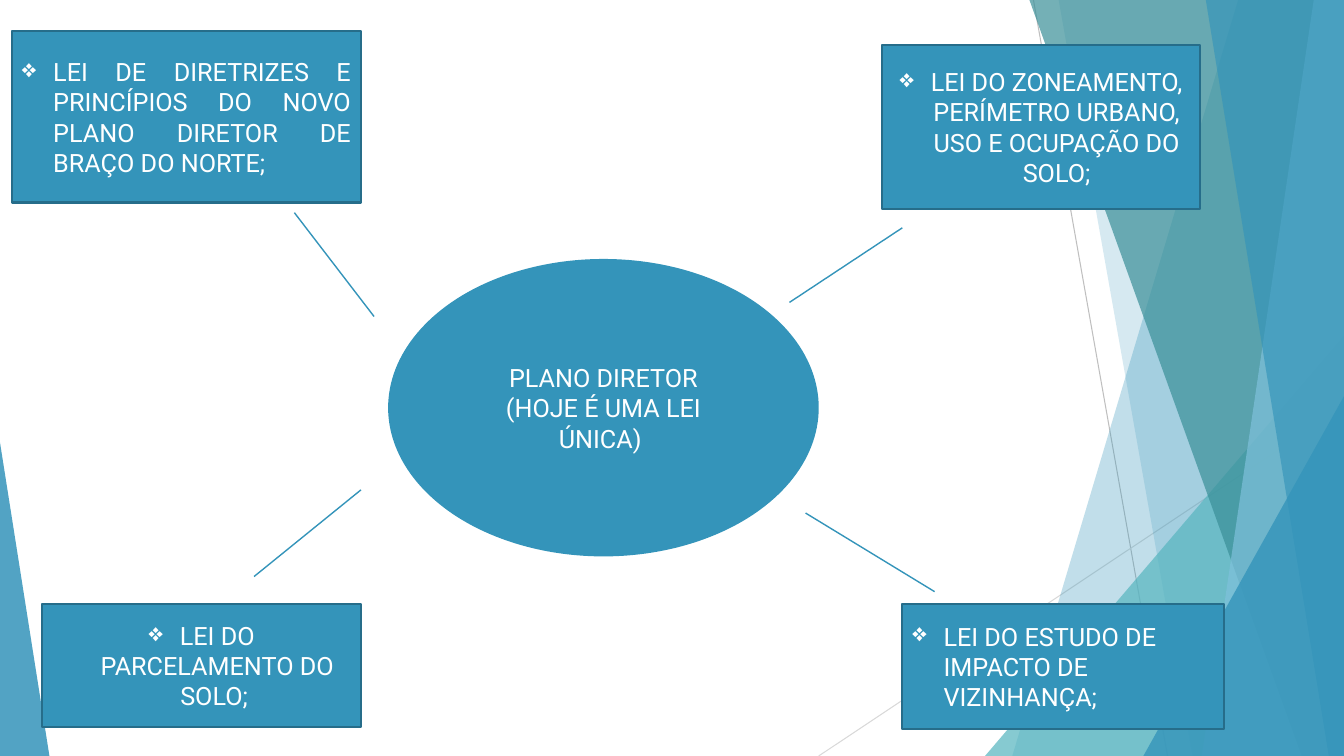
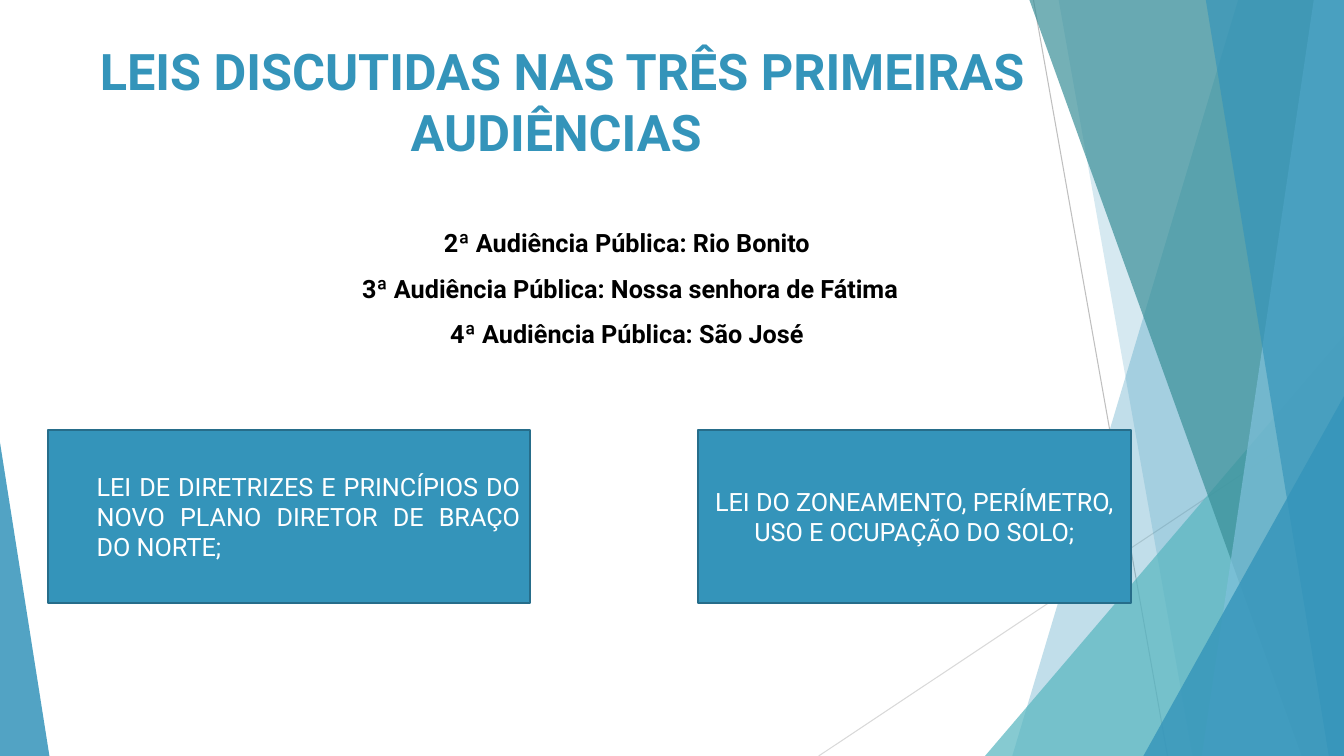
from dataclasses import dataclass
from lxml.etree import SubElement
from pptx import Presentation
from pptx.dml.color import RGBColor
from pptx.enum.shapes import MSO_CONNECTOR, MSO_SHAPE
from pptx.enum.text import MSO_ANCHOR, PP_ALIGN
from pptx.oxml.ns import qn
from pptx.util import Inches, Pt


@dataclass(frozen=True)
class Theme:
    blue: str = "3494BA"
    edge: str = "266D8A"
    teal: str = "58B6C0"
    deep: str = "3A8F98"
    sky: str = "7FC1DB"
    gray: str = "BFBFBF"
    pale: str = "D9D9D9"
    white: str = "FFFFFF"
    black: str = "000000"
    font: str = "Roboto"
    head: int = 36
    body: int = 18


T = Theme()
WIDE, HIGH = 13.33, 7.5
LEFT, MID, JUST = PP_ALIGN.LEFT, PP_ALIGN.CENTER, PP_ALIGN.JUSTIFY


def rgb(code):
    return RGBColor.from_string(code)


def paint(shape, fill, edge=None, alpha=None):
    """Fill a shape, with an optional outline and opacity in percent."""
    shape.shadow.inherit = False
    shape.fill.solid()
    shape.fill.fore_color.rgb = rgb(fill)
    if alpha:
        color = shape.element.spPr.find(qn("a:solidFill"))[0]
        SubElement(color, qn("a:alpha")).set("val", str(alpha * 1000))
    if edge:
        shape.line.color.rgb = rgb(edge)
        shape.line.width = Pt(1.5)
    else:
        shape.line.fill.background()
    return shape


def rule(slide, start, end, color, width):
    line = slide.shapes.add_connector(
        MSO_CONNECTOR.STRAIGHT, *map(Inches, start + end))
    line.line.color.rgb = rgb(color)
    line.line.width = Pt(width)
    SubElement(line.element.spPr, qn("a:effectLst"))


def write(shape, lines, align=MID, color=T.white, size=T.body, bold=False,
          indent=0, bullet=None, space=None, anchor=MSO_ANCHOR.MIDDLE):
    """Put one paragraph per line into a shape."""
    frame = shape.text_frame
    frame.word_wrap = True
    frame.vertical_anchor = anchor
    frame.text = "\n".join(lines)
    for para in frame.paragraphs:
        para.alignment = align
        if space:
            para.line_spacing = space
        props = para._p.get_or_add_pPr()
        if indent:
            props.set("marL", str(Inches(indent)))
        if bullet:
            props.set("indent", str(-Inches(indent)))
            SubElement(props, qn("a:buChar")).set("char", bullet)
        para.font.name = T.font
        para.font.size = Pt(size)
        para.font.bold = bold
        para.font.color.rgb = rgb(color)


def card(slide, box, text, kind=MSO_SHAPE.RECTANGLE, edge=T.edge, **style):
    shape = slide.shapes.add_shape(kind, *map(Inches, box))
    write(paint(shape, T.blue, edge), text, **style)


def label(slide, box, lines, **style):
    shape = slide.shapes.add_textbox(*map(Inches, box))
    write(shape, lines, bold=True, anchor=MSO_ANCHOR.TOP, **style)


def veil(slide, top, foot, color, alpha):
    """Band from a slanted left side to the right edge of the slide."""
    pen = slide.shapes.build_freeform(Inches(top), 0)
    pen.add_line_segments([(Inches(x), Inches(y)) for x, y in
                           ((WIDE, 0), (WIDE, HIGH), (foot, HIGH))])
    paint(pen.convert_to_shape(), color, alpha=alpha)


def wedge(slide, left, top, width, tip, color, alpha):
    """Triangle standing on the bottom edge, tip at 0 (left) or 1 (right)."""
    box = left, top, width, HIGH - top
    shape = slide.shapes.add_shape(
        MSO_SHAPE.ISOSCELES_TRIANGLE, *map(Inches, box))
    shape.adjustments[0] = tip
    paint(shape, color, alpha=alpha)


def decor(slide, layout):
    """Draw the shared facets and move them to the layout."""
    rule(slide, (10.25, 0), (11.58, HIGH), T.gray, 0.75)
    rule(slide, (WIDE, 4.03), (8.12, HIGH), T.pale, 0.75)
    veil(slide, 12.28, 10.04, T.blue, 30)
    veil(slide, 10.5, 11.83, T.blue, 20)
    wedge(slide, 9.77, 3.33, 3.56, 1, T.teal, 72)
    veil(slide, 10.21, 12.91, T.deep, 70)
    veil(slide, 13.03, 11.92, T.sky, 70)
    veil(slide, 11.96, 13.18, T.blue, 65)
    wedge(slide, 11.34, 3.93, 1.99, 1, T.blue, 80)
    wedge(slide, 0, 4.39, 0.49, 0, T.blue, 85)
    for shape in list(slide.shapes):
        layout.shapes.element.append(shape.element)


def plan(slide):
    """Central plan with four laws around it."""
    card(slide, (3.86, 2.58, 4.25, 2.93),
         ["PLANO DIRETOR", "(HOJE É UMA LEI ÚNICA) "],
         kind=MSO_SHAPE.OVAL, edge=T.blue)
    # Law box, its text and alignment, and the spoke to the centre
    laws = [
        ((8.75, 0.45, 3.15, 1.62), MID, (7.83, 3), (8.95, 2.26),
         "LEI DO ZONEAMENTO, PERÍMETRO URBANO, USO E OCUPAÇÃO DO SOLO;"),
        ((0.42, 5.99, 3.16, 1.22), MID, (3.58, 4.86), (2.52, 5.72),
         "LEI DO PARCELAMENTO DO SOLO; "),
        ((8.95, 5.99, 3.19, 1.24), LEFT, (7.99, 5.09), (9.27, 5.87),
         "LEI DO ESTUDO DE IMPACTO DE VIZINHANÇA;"),
        ((0.12, 0.31, 3.46, 1.7), JUST, (3.71, 3.14), (2.92, 2.11),
         "LEI DE DIRETRIZES E PRINCÍPIOS DO NOVO PLANO DIRETOR DE BRAÇO "
         "DO NORTE;"),
    ]
    for box, align, start, end, text in laws:
        rule(slide, start, end, T.blue, 1)
        card(slide, box, [text], align=align, indent=0.31, bullet="❖")


def talks(slide):
    """Title, list of hearings and the two laws discussed."""
    label(slide, (0.48, 0.35, 10.2, 1.44),
          ["LEIS DISCUTIDAS NAS TRÊS PRIMEIRAS AUDIÊNCIAS "],
          color=T.blue, size=T.head)
    label(slide, (3.3, 2.06, 5.9, 1.41),
          ["2ª Audiência Pública: Rio Bonito ",
           "3ª Audiência Pública: Nossa senhora de Fátima",
           "4ª Audiência Pública: São José "],
          color=T.black, space=1.5)
    # Law cards share one row
    top, tall = 4.27, 1.71
    card(slide, (0.48, top, 4.78, tall),
         ["LEI DE DIRETRIZES E PRINCÍPIOS DO NOVO PLANO DIRETOR DE BRAÇO "
          "DO NORTE;"], align=JUST, indent=0.38)
    card(slide, (6.92, top, 4.3, tall),
         ["LEI DO ZONEAMENTO, PERÍMETRO, USO E OCUPAÇÃO DO SOLO;"])


def main():
    deck = Presentation()
    deck.slide_width, deck.slide_height = Inches(WIDE), Inches(HIGH)
    blank = deck.slide_layouts[6]
    first, second = (deck.slides.add_slide(blank) for _ in range(2))
    decor(first, blank)
    plan(first)
    talks(second)
    deck.save("out.pptx")


if __name__ == "__main__":
    main()
